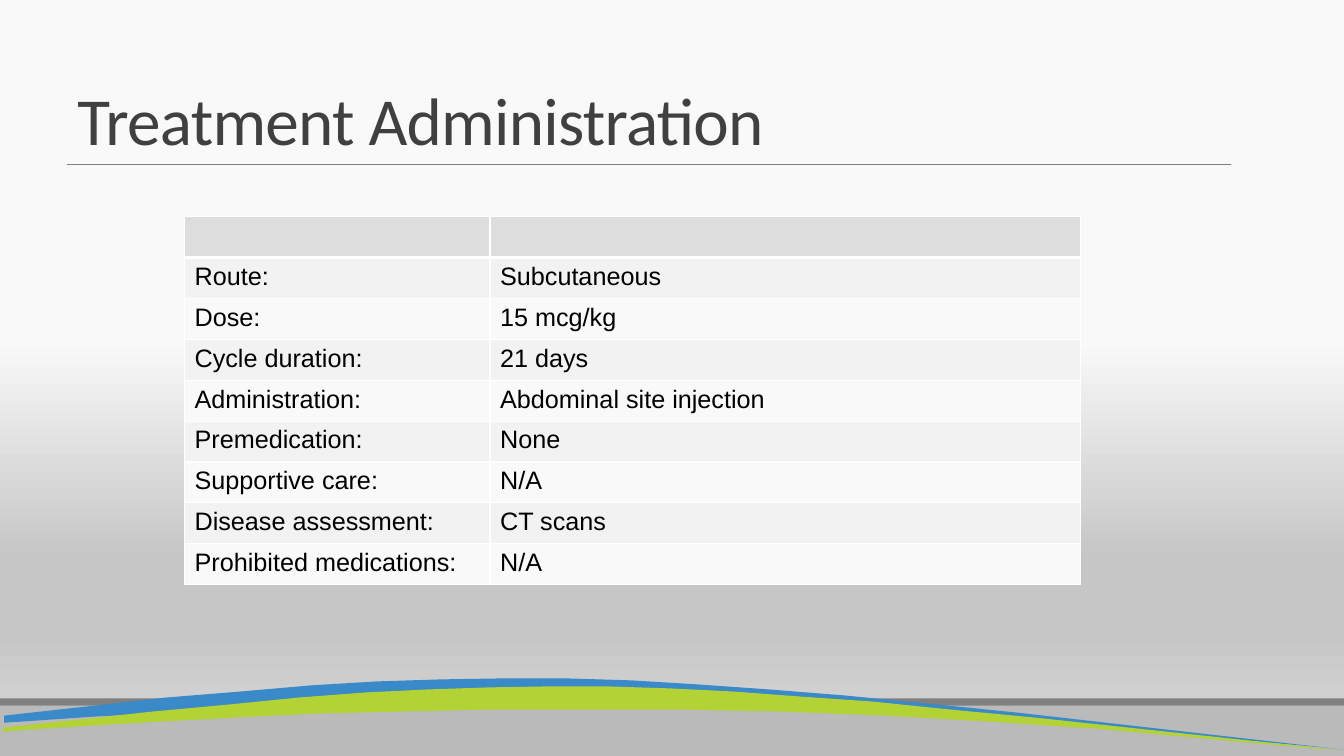
from lxml import etree
from pptx import Presentation
from pptx.dml.color import RGBColor
from pptx.enum.shapes import MSO_CONNECTOR, MSO_SHAPE
from pptx.enum.text import MSO_ANCHOR
from pptx.oxml import parse_xml
from pptx.oxml.ns import nsdecls, qn
from pptx.util import Pt

STRAIGHT = MSO_CONNECTOR.STRAIGHT
RECTANGLE = MSO_SHAPE.RECTANGLE
BOTTOM = MSO_ANCHOR.BOTTOM

EMU_PER_PX = 9144  # 100 px to the inch
WIDTH, HEIGHT = 1333, 750

COLOURS = {
    "title": "404040", "text": "000000", "rule": "808080", "footer": "BABABA",
    "blue": "3A89C9", "green": "B2D235", "border": "FFFFFF",
    "header": "DDDDDD", "odd": "F2F2F2", "even": "F9F9F9",
}
BACKGROUND_STOPS = [(45, "F9F9F9"), (74, "C6C6C6"), (83, "C6C6C6"), (100, "D9D9D9")]

# Each wave: upper edge left to right, then lower edge right to left
BLUE_WAVE = [
    (4, 710), (85, 701), (165, 692), (239, 686), (308, 680), (374, 676),
    (438, 674), (500, 673), (562, 673), (626, 675), (692, 679), (763, 684),
    (838, 690), (920, 698), (1009, 707), (1335, 744),
    (1326, 743), (1306, 741), (1074, 720), (962, 711), (852, 705), (744, 701),
    (639, 699), (537, 698), (439, 699), (345, 701), (256, 703), (171, 707),
    (93, 711), (20, 716), (4, 717),
]
GREEN_WAVE = [
    (3, 722), (68, 715), (151, 706), (227, 699), (297, 692), (363, 687),
    (425, 684), (485, 682), (544, 681), (603, 681), (664, 683), (726, 686),
    (793, 691), (865, 696), (943, 704), (1027, 712), (1336, 745),
    (1327, 744), (1308, 743), (1088, 723), (982, 716), (878, 710), (776, 706),
    (676, 704), (579, 704), (486, 704), (397, 706), (312, 708), (233, 712),
    (158, 716), (90, 720), (27, 724), (3, 726),
]

TREATMENT = [
    ("", ""),
    ("Route:", "Subcutaneous"),
    ("Dose:", "15 mcg/kg"),
    ("Cycle duration:", "21 days"),
    ("Administration:", "Abdominal site injection"),
    ("Premedication:", "None"),
    ("Supportive care:", "N/A"),
    ("Disease assessment:", "CT scans"),
    ("Prohibited medications:", "N/A"),
]


def px(*lengths):
    return [length * EMU_PER_PX for length in lengths]


def colour(name):
    return RGBColor.from_string(COLOURS[name])


class SlideBuilder:
    def __init__(self, page):
        self.page = page

    def background(self, stops):
        fill = self.page.background.fill
        fill.gradient()
        fill.gradient_angle = 270
        stop_list = self.page.element.find(".//" + qn("a:gsLst"))
        for old_stop in list(stop_list):
            stop_list.remove(old_stop)
        for percent, value in stops:
            stop = etree.SubElement(stop_list, qn("a:gs"), pos=str(percent * 1000))
            etree.SubElement(stop, qn("a:srgbClr"), val=value)

    def paint(self, shape, fill):
        shape.shadow.inherit = False
        shape.fill.solid()
        shape.fill.fore_color.rgb = colour(fill)
        shape.line.fill.background()

    def band(self, left, top, width, height, fill):
        shape = self.page.shapes.add_shape(RECTANGLE, *px(left, top, width, height))
        self.paint(shape, fill)

    def outline(self, points, fill):
        builder = self.page.shapes.build_freeform(*points[0], scale=EMU_PER_PX)
        builder.add_line_segments(points[1:], close=True)
        self.paint(builder.convert_to_shape(), fill)

    def rule(self, left, top, right, weight):
        line = self.page.shapes.add_connector(STRAIGHT, *px(left, top, right, top))
        line.line.color.rgb = colour("rule")
        line.line.width = Pt(weight)
        etree.SubElement(line._element.spPr, qn("a:effectLst"))

    def style(self, paragraph, face, size, name):
        paragraph.font.name = face
        paragraph.font.size = Pt(size)
        paragraph.font.color.rgb = colour(name)

    def title(self, text, left, top, width, height):
        frame = self.page.shapes.add_textbox(*px(left, top, width, height)).text_frame
        frame.word_wrap = True
        frame.vertical_anchor = BOTTOM
        para = frame.paragraphs[0]
        para.line_spacing = 0.85
        span = para.add_run()
        span.text = text
        span._r.get_or_add_rPr().set("spc", "-50")
        self.style(para, "Calibri", 48, "title")

    def cell_borders(self, cell, top, bottom):
        properties = cell._tc.get_or_add_tcPr()
        for side, weight in (("L", 1), ("R", 1), ("T", top), ("B", bottom)):
            properties.append(parse_xml(
                f'<a:ln{side} {nsdecls("a")} w="{Pt(weight)}"><a:solidFill>'
                f'<a:srgbClr val="{COLOURS["border"]}"/></a:solidFill></a:ln{side}>'))

    def table(self, rows, left, top, column_widths, height):
        frame = self.page.shapes.add_table(
            len(rows), len(column_widths), *px(left, top, sum(column_widths), height))
        table = frame.table
        for column, width in zip(table.columns, px(*column_widths)):
            column.width = width
        for row_index, row in enumerate(rows):
            fill = "odd" if row_index % 2 else "even"
            if row_index == 0:
                fill = "header"
            for column_index, text in enumerate(row):
                cell = table.cell(row_index, column_index)
                # Heavier line between the header and the first row
                self.cell_borders(cell, top=3 if row_index == 1 else 1,
                                  bottom=3 if row_index == 0 else 1)
                cell.fill.solid()
                cell.fill.fore_color.rgb = colour(fill)
                cell.text = text
                self.style(cell.text_frame.paragraphs[0], "Arial", 18, "text")


def main():
    deck = Presentation()
    deck.slide_width, deck.slide_height = px(WIDTH, HEIGHT)
    slide = SlideBuilder(deck.slides.add_slide(deck.slide_layouts[6]))

    # Backdrop and footer
    slide.background(BACKGROUND_STOPS)
    slide.band(0, 700, WIDTH, 50, "footer")
    slide.band(0, 693, WIDTH, 7, "rule")
    slide.rule(66, 163, 1221, 0.5)
    slide.outline(BLUE_WAVE, "blue")
    slide.outline(GREEN_WAVE, "green")

    # Title and treatment table
    slide.title("Treatment Administration", 67, 4, 1153, 159)
    slide.table(TREATMENT, 183, 215, [303, 586], 365)

    deck.save("out.pptx")


if __name__ == "__main__":
    main()
